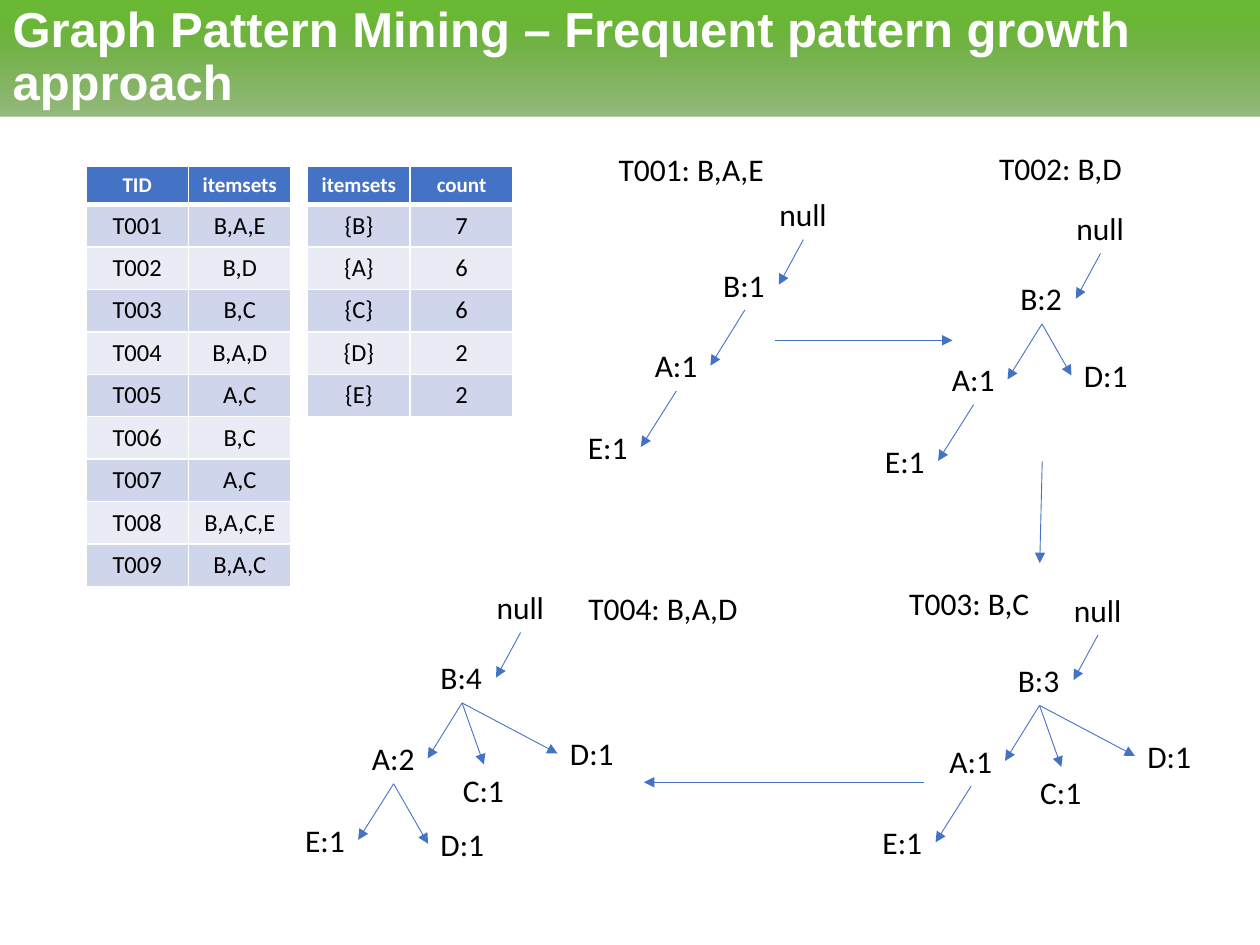
from pptx import Presentation
from pptx.dml.color import RGBColor
from pptx.enum.shapes import MSO_CONNECTOR
from pptx.enum.text import MSO_ANCHOR, MSO_AUTO_SIZE, PP_ALIGN
from pptx.oxml import parse_xml
from pptx.oxml.ns import nsdecls
from pptx.util import Cm, Pt

COLORS = {
    "white": "FFFFFF", "black": "000000", "blue": "4472C4",
    "band_dark": "CFD5EA", "band_light": "E9EBF5",
    "green_low": "518D2A", "green_mid": "6AB636", "green_top": "6ABA34",
}
BOX_HEIGHT = 1.02
NODE_WIDTHS = {"n": 1.47, "A": 1.37, "B": 1.37, "C": 1.35, "D": 1.4, "E": 1.32}
TOP, LEFT, BOTTOM, RIGHT = range(4)  # connection sites of a box

# Node places relative to the B node of each tree
NULL_AT, B_AT, A_AT, E_AT = (1.13, -1.42), (0, 0), (-1.38, 1.63), (-2.73, 3.27)
C_AT, NEAR_D_AT, FAR_D_AT, LOW_D_AT = (0.45, 2.26), (1.28, 1.55), (2.61, 1.53), (0, 3.35)

TRANSACTIONS = [
    ("TID", "itemsets"), ("T001", "B,A,E"), ("T002", "B,D"), ("T003", "B,C"),
    ("T004", "B,A,D"), ("T005", "A,C"), ("T006", "B,C"), ("T007", "A,C"),
    ("T008", "B,A,C,E"), ("T009", "B,A,C"),
]
COUNTS = [("itemsets", "count"), ("{B}", "7"), ("{A}", "6"), ("{C}", "6"),
          ("{D}", "2"), ("{E}", "2")]


def rgb(name):
    return RGBColor.from_string(COLORS[name])


def add_run(para, text, size, color="black", bold=False, font="Calibri"):
    span = para.add_run()
    span.text = text
    span.font.name, span.font.size, span.font.bold = font, Pt(size), bold
    span.font.color.rgb = rgb(color)


def format_title(page, text):
    title = page.shapes.title
    title.left, title.top, title.width, title.height = Cm(0), Cm(0), Cm(25.4), Cm(2.34)
    stops = "".join(
        f'<a:gs pos="{position * 1000}"><a:srgbClr val="{COLORS[name]}">'
        f'<a:alpha val="{alpha * 1000}"/></a:srgbClr></a:gs>'
        for position, name, alpha in
        [(0, "green_low", 60), (80, "green_mid", 100), (100, "green_top", 100)])
    title._element.spPr.append(parse_xml(
        f'<a:gradFill {nsdecls("a")} rotWithShape="1"><a:gsLst>{stops}</a:gsLst>'
        '<a:lin ang="16200000" scaled="0"/></a:gradFill>'))
    frame = title.text_frame
    frame.word_wrap = True
    frame.auto_size = MSO_AUTO_SIZE.NONE
    frame.vertical_anchor = MSO_ANCHOR.MIDDLE
    para = frame.paragraphs[0]
    para.alignment, para.line_spacing = PP_ALIGN.LEFT, 0.9
    add_run(para, text, 28, "white", True, "Arial")


def set_borders(cell, row):
    widths = {"lnL": 1, "lnR": 1, "lnT": 3 if row == 1 else 1, "lnB": 3 if row == 0 else 1}
    for tag, width in widths.items():
        cell._tc.get_or_add_tcPr().append(parse_xml(
            f'<a:{tag} {nsdecls("a")} w="{Pt(width)}"><a:solidFill>'
            f'<a:srgbClr val="{COLORS["white"]}"/></a:solidFill></a:{tag}>'))


def add_grid(page, left, rows):
    frame = page.shapes.add_table(len(rows), 2, Cm(left), Cm(3.35), Cm(4.14),
                                  Cm(0.71 + 0.79 * (len(rows) - 1)))
    table = frame.table
    for column in table.columns:
        column.width = Cm(2.07)
    for r, values in enumerate(rows):
        header = r == 0
        table.rows[r].height = Cm(0.71 if header else 0.79)
        fill = "blue" if header else ("band_light", "band_dark")[r % 2]
        for c, value in enumerate(values):
            cell = table.cell(r, c)
            set_borders(cell, r)
            cell.fill.solid()
            cell.fill.fore_color.rgb = rgb(fill)
            para = cell.text_frame.paragraphs[0]
            para.alignment = PP_ALIGN.CENTER
            add_run(para, value, 12 if header else 14, "white" if header else "black", header)


def add_label(page, text, left, top, width):
    box = page.shapes.add_textbox(Cm(left), Cm(top), Cm(width), Cm(BOX_HEIGHT))
    frame = box.text_frame
    frame.word_wrap = False
    frame.auto_size = MSO_AUTO_SIZE.SHAPE_TO_FIT_TEXT
    add_run(frame.paragraphs[0], text, 18)
    return box


def add_arrow(page, start=(0, 0), end=(0, 0)):
    arrow = page.shapes.add_connector(MSO_CONNECTOR.STRAIGHT, *map(Cm, start + end))
    arrow.line.color.rgb = rgb("blue")
    arrow.line.width = Pt(0.5)
    arrow.line._get_or_add_ln().append(
        parse_xml(f'<a:tailEnd {nsdecls("a")} type="triangle"/>'))
    arrow._element.spPr.append(parse_xml(f'<a:effectLst {nsdecls("a")}/>'))
    return arrow


def add_tree(page, left, top, nodes):
    """Each node is (text, place, index of its parent, side the arrow meets)."""
    boxes = []
    for text, (dx, dy), parent, side in nodes:
        box = add_label(page, text, left + dx, top + dy, NODE_WIDTHS[text[0]])
        boxes.append(box)
        if parent is not None:
            arrow = add_arrow(page)
            arrow.begin_connect(boxes[parent], BOTTOM)
            arrow.end_connect(box, side)


def chain(b_count, a_count):
    return [("null", NULL_AT, None, None), (f"B:{b_count}", B_AT, 0, RIGHT),
            (f"A:{a_count}", A_AT, 1, RIGHT), ("E:1", E_AT, 2, RIGHT)]


def main():
    deck = Presentation()
    deck.slide_width, deck.slide_height = Cm(25.4), Cm(19.05)
    page = deck.slides.add_slide(deck.slide_layouts[5])
    format_title(page, "Graph Pattern Mining – Frequent pattern growth approach")

    # Transactions and item counts
    add_grid(page, 6.2, COUNTS)
    add_grid(page, 1.73, TRANSACTIONS)

    # Tree after each transaction
    near_d = [("D:1", NEAR_D_AT, 1, LEFT)]
    wide = [("D:1", FAR_D_AT, 1, LEFT), ("C:1", C_AT, 1, TOP)]
    low_d = [("D:1", LOW_D_AT, 2, LEFT)]
    add_tree(page, 14.33, 5.23, chain(1, 1))
    add_tree(page, 20.32, 5.51, chain(2, 1) + near_d)
    add_tree(page, 20.27, 13.2, chain(3, 1) + wide)
    add_tree(page, 8.63, 13.15, chain(4, 2) + wide + low_d)

    # Transaction captions
    for text, left, top, width in [
            ("T001: B,A,E", 12.22, 2.9, 3.48), ("T002: B,D", 19.89, 2.88, 3.02),
            ("T003: B,C", 18.08, 11.64, 2.97), ("T004: B,A,D", 11.61, 11.74, 3.56)]:
        add_label(page, text, left, top, width)

    # Steps from one tree to the next
    add_arrow(page, (15.62, 6.86), (19.2, 6.86))
    add_arrow(page, (21.01, 9.3), (20.96, 11.35))
    add_arrow(page, (18.62, 15.77), (12.98, 15.77))

    deck.save("out.pptx")


if __name__ == "__main__":
    main()
